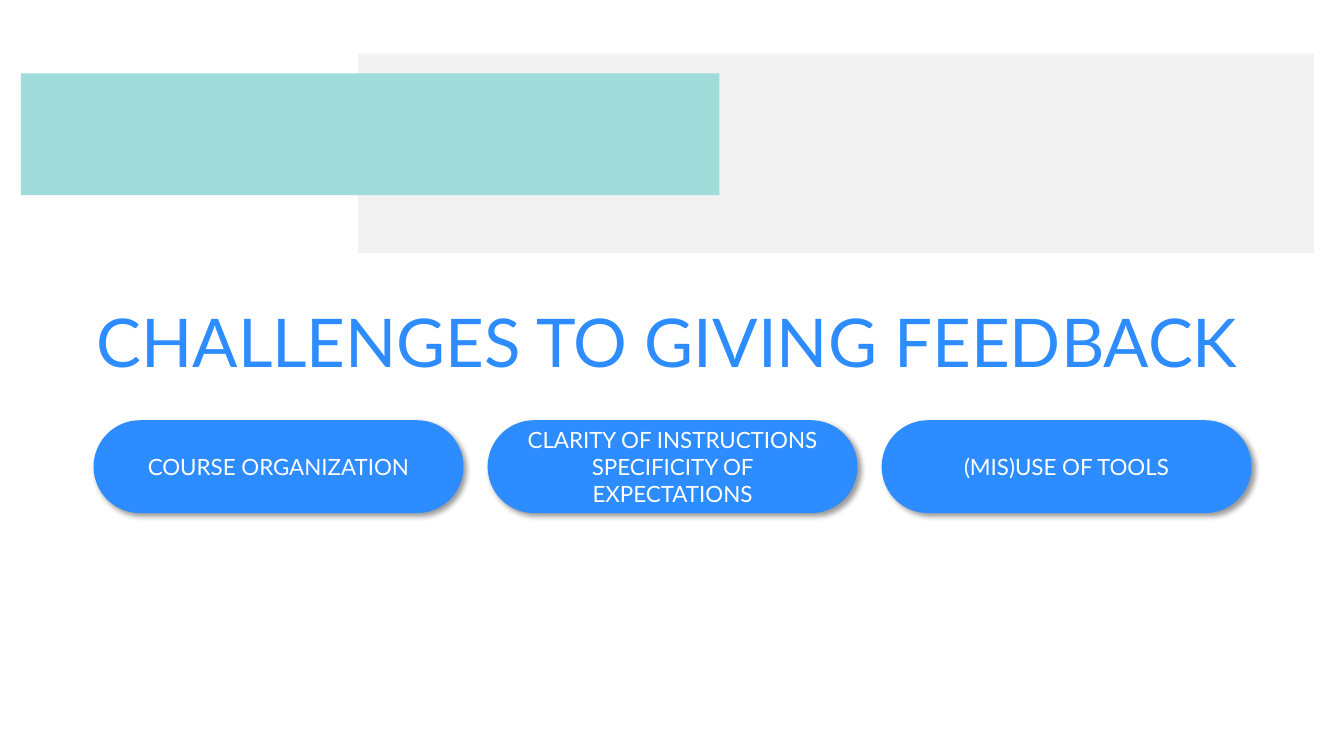
from lxml import etree
from pptx import Presentation
from pptx import util as u
from pptx.dml.color import RGBColor
from pptx.enum import shapes, text
from pptx.oxml import ns

COLORS = {
    "blue": "2D8CFF",
    "teal": "9FDCDA",
    "gray": "F2F2F2",
    "white": "FFFFFF",
    "shadow": "000000",
}
FONT = "Lato"
CHALLENGES = [
    "COURSE ORGANIZATION",
    "CLARITY OF INSTRUCTIONS SPECIFICITY OF EXPECTATIONS",
    "(MIS)USE OF TOOLS",
]
PILL_LEFT, PILL_TOP, PILL_WIDTH, PILL_HEIGHT = 2.36, 10.59, 9.32, 2.34
PILL_PITCH = 9.93


def rgb(color):
    return RGBColor.from_string(COLORS[color])


def add_box(slide, kind, left, top, width, height, color=None):
    shape = slide.shapes.add_shape(
        kind, u.Cm(left), u.Cm(top), u.Cm(width), u.Cm(height))
    shape.shadow.inherit = False
    shape.line.fill.background()
    if color:
        shape.fill.solid()
        shape.fill.fore_color.rgb = rgb(color)
    else:
        shape.fill.background()
    return shape


def add_text(shape, words, size, color, alignment):
    frame = shape.text_frame
    frame.word_wrap = True
    frame.vertical_anchor = text.MSO_ANCHOR.MIDDLE
    paragraph = frame.paragraphs[0]
    paragraph.alignment = alignment
    run = paragraph.add_run()
    run.text = words
    run.font.name = FONT
    run.font.size = u.Pt(size)
    run.font.color.rgb = rgb(color)


def add_shadow(shape):
    effects = shape._element.spPr.find(ns.qn("a:effectLst"))
    shadow = etree.SubElement(
        effects, ns.qn("a:outerShdw"), blurRad=str(u.Pt(4)),
        dist=str(u.Pt(3)), dir=str(45 * 60000), algn="tl", rotWithShape="0")
    color = etree.SubElement(shadow, ns.qn("a:srgbClr"), val=COLORS["shadow"])
    etree.SubElement(color, ns.qn("a:alpha"), val="40000")


def add_title(slide, words):
    title = add_box(slide, shapes.MSO_SHAPE.ROUNDED_RECTANGLE,
                    2.18, 7.65, 34.7, 1.88)
    title.adjustments[0] = 0
    add_text(title, words, 48, "blue", text.PP_ALIGN.LEFT)


def add_pill(slide, left, words):
    pill = add_box(slide, shapes.MSO_SHAPE.ROUNDED_RECTANGLE,
                   left, PILL_TOP, PILL_WIDTH, PILL_HEIGHT, "blue")
    pill.adjustments[0] = 0.5
    add_shadow(pill)
    add_text(pill, words, 16, "white", text.PP_ALIGN.CENTER)


def main():
    presentation = Presentation()
    presentation.slide_width = u.Cm(33.87)
    presentation.slide_height = u.Cm(19.05)
    slide = presentation.slides.add_slide(presentation.slide_layouts[6])

    rectangle = shapes.MSO_SHAPE.RECTANGLE
    add_box(slide, rectangle, 9.02, 1.35, 24.1, 5.03, "gray")
    add_title(slide, "CHALLENGES TO GIVING FEEDBACK")
    for index, challenge in enumerate(CHALLENGES):
        add_pill(slide, PILL_LEFT + index * PILL_PITCH, challenge)
    add_box(slide, rectangle, 0.53, 1.85, 17.6, 3.07, "teal")

    presentation.save("out.pptx")


if __name__ == "__main__":
    main()
